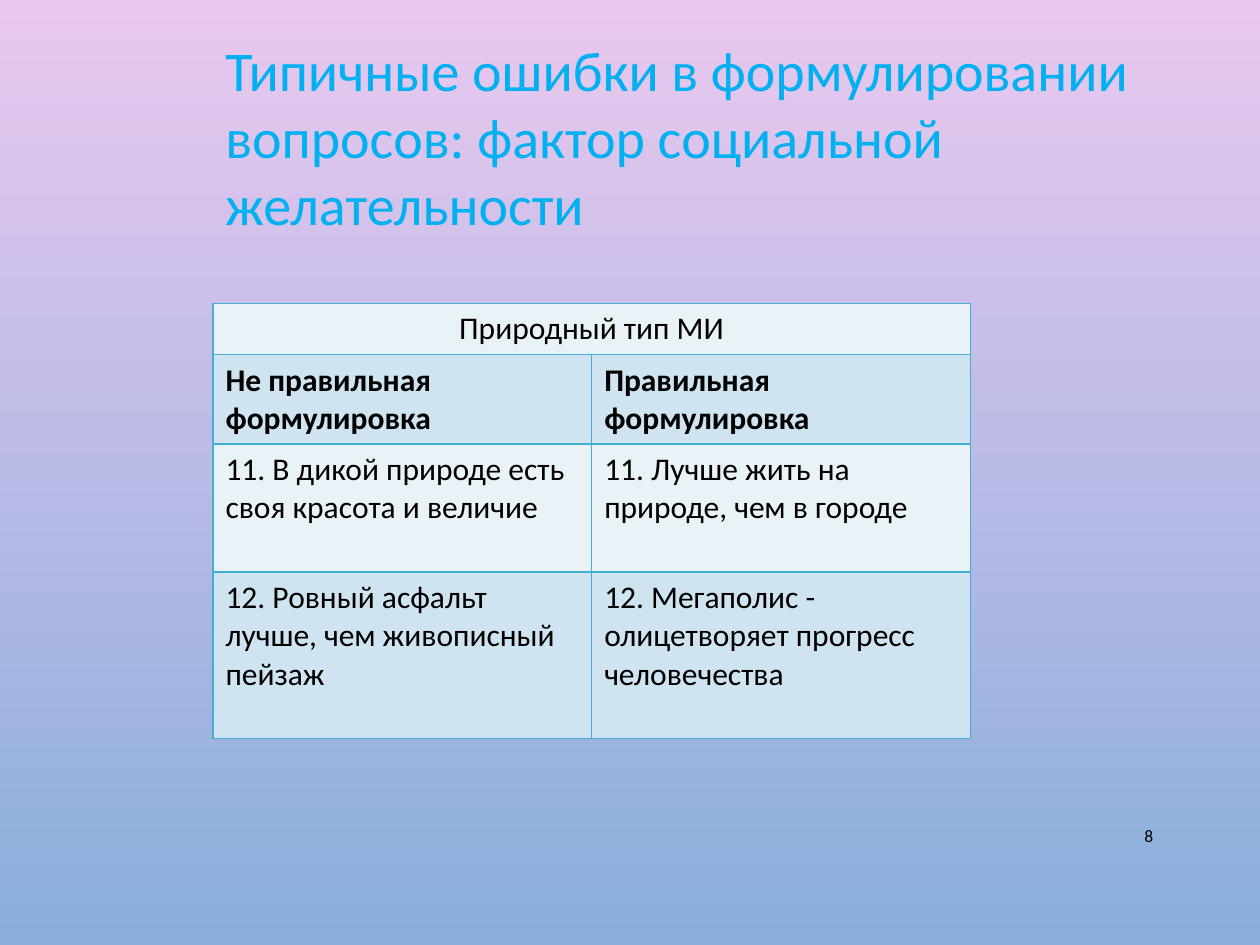
from lxml import etree
from pptx import Presentation
from pptx.dml import color
from pptx.enum import text
from pptx.oxml import ns
from pptx.util import Pt

COLORS = {
    "top": "E9C8EF", "bottom": "89AEDB", "title": "00B0F0", "text": "000000",
    "light": "E9F2F7", "dark": "CFE3F0", "border": "43AFD6",
}


def write(frame, content, size=18, ink="text", bold=False,
          align=text.PP_ALIGN.LEFT, anchor=text.MSO_ANCHOR.TOP):
    frame.word_wrap = True
    frame.vertical_anchor = anchor
    paragraph = frame.paragraphs[0]
    paragraph.alignment = align
    run = paragraph.add_run()
    run.text = content
    run.font.name = "Calibri"
    run.font.size = Pt(size)
    run.font.bold = bold
    run.font.color.rgb = color.RGBColor.from_string(COLORS[ink])


def set_borders(cell):
    properties = cell._tc.get_or_add_tcPr()
    for position, side in enumerate(("lnL", "lnR", "lnT", "lnB")):
        line = etree.Element(ns.qn("a:" + side), w=str(Pt(1)))
        fill = etree.SubElement(line, ns.qn("a:solidFill"))
        etree.SubElement(fill, ns.qn("a:srgbClr"), val=COLORS["border"])
        properties.insert(position, line)


presentation = Presentation()
presentation.slide_width, presentation.slide_height = Pt(720), Pt(540)
slide = presentation.slides.add_slide(presentation.slide_layouts[6])

# Background: vertical gradient
background = slide.background.fill
background.gradient()
background.gradient_angle = 270
for stop, name, position in zip(background.gradient_stops, ("top", "bottom"), (0, 1)):
    stop.color.rgb = color.RGBColor.from_string(COLORS[name])
    stop.position = position

# Slide number
number = slide.shapes.add_textbox(Pt(620.6), Pt(463), Pt(45.4), Pt(28.8))
write(number.text_frame, "8", size=10, align=text.PP_ALIGN.RIGHT,
      anchor=text.MSO_ANCHOR.MIDDLE)

# Title
title = slide.shapes.add_textbox(Pt(121.7), Pt(16.6), Pt(566), Pt(55.4))
write(title.text_frame,
      "Типичные ошибки в формулировании вопросов: фактор социальной желательности",
      size=32, ink="title")

# Table of wordings
rows = [
    (29.2, ("Природный тип МИ", "")),
    (51, ("Не правильная формулировка", "Правильная формулировка")),
    (73.2, ("11. В дикой природе есть своя красота и величие",
            "11. Лучше жить на природе, чем в городе")),
    (95.2, ("12. Ровный асфальт лучше, чем живописный пейзаж",
            "12. Мегаполис - олицетворяет прогресс человечества")),
]
total_height = sum(height for height, _ in rows)
table = slide.shapes.add_table(len(rows), 2, Pt(121.7), Pt(173.5),
                               Pt(432.8), Pt(total_height)).table
table.cell(0, 0).merge(table.cell(0, 1))
for row_index, (height, contents) in enumerate(rows):
    table.rows[row_index].height = Pt(height)
    for column_index, content in enumerate(contents):
        cell = table.cell(row_index, column_index)
        cell.fill.solid()
        fill_name = "dark" if row_index % 2 else "light"
        cell.fill.fore_color.rgb = color.RGBColor.from_string(COLORS[fill_name])
        set_borders(cell)
        if content:
            write(cell.text_frame, content, bold=row_index == 1,
                  align=text.PP_ALIGN.CENTER if row_index == 0 else text.PP_ALIGN.LEFT)

presentation.save("out.pptx")
